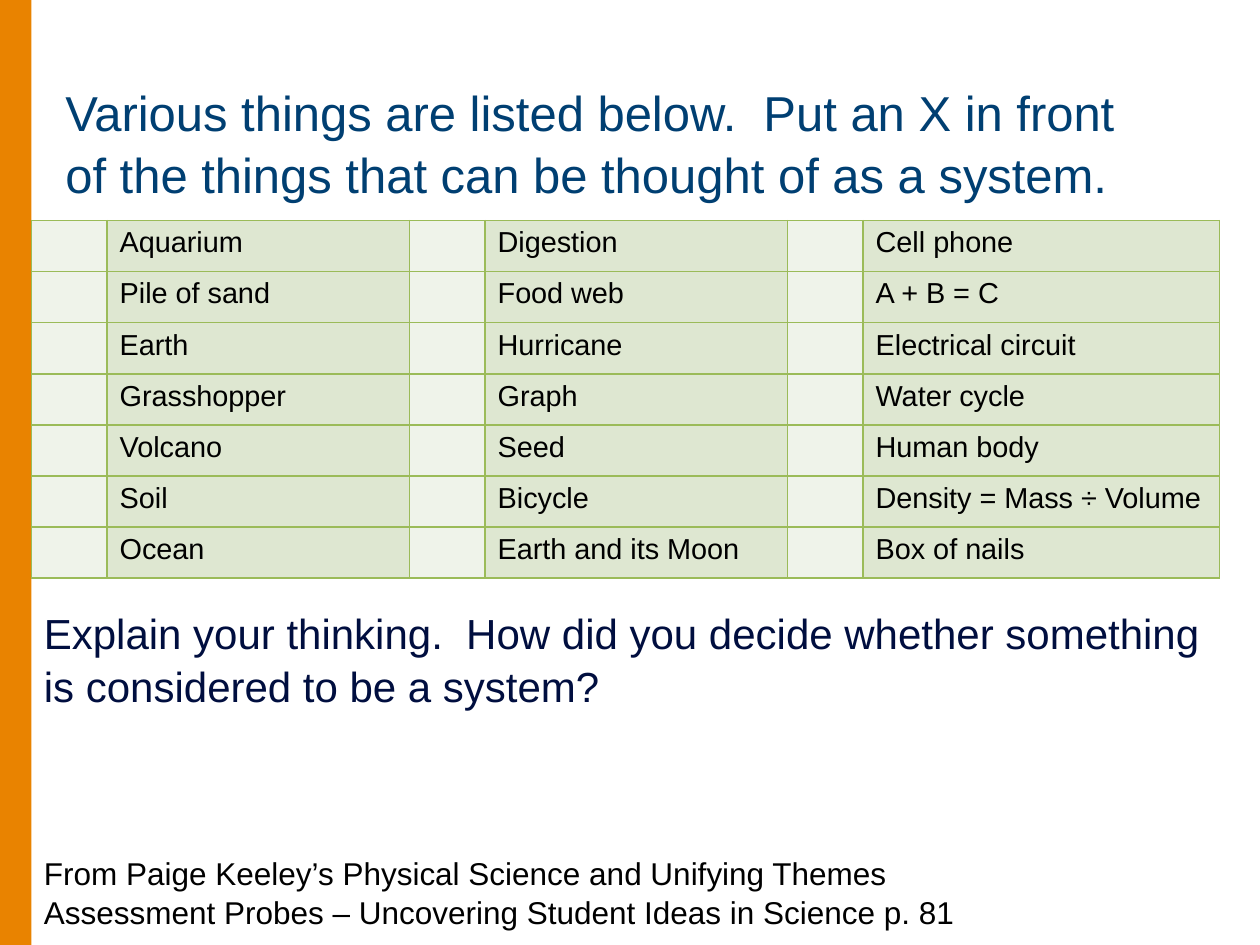
from dataclasses import dataclass

from lxml import etree
from pptx import Presentation
from pptx.dml.color import RGBColor
from pptx.enum.shapes import MSO_SHAPE
from pptx.enum.text import MSO_ANCHOR
from pptx.oxml.ns import qn
from pptx.util import Pt

RECTANGLE = MSO_SHAPE.RECTANGLE
TOP = MSO_ANCHOR.TOP
MIDDLE = MSO_ANCHOR.MIDDLE
PX = 9144
BORDER_SIDES = ("a:lnL", "a:lnR", "a:lnT", "a:lnB")


@dataclass(frozen=True)
class Theme:
    """Holds the colours and type sizes of the slide."""
    font: str = "Arial"
    bar: str = "E98300"
    title: str = "003F72"
    question: str = "000E3F"
    text: str = "000000"
    border: str = "9BBB59"
    check_fill: str = "EFF3EA"
    item_fill: str = "DEE7D1"
    title_size: float = 28
    question_size: float = 24
    source_size: float = 18
    item_size: float = 16.5
    border_width: float = 1
    line_spacing: float = 1.05


THEME = Theme()

ITEMS = (
    ("Aquarium", "Digestion", "Cell phone"),
    ("Pile of sand", "Food web", "A + B = C"),
    ("Earth", "Hurricane", "Electrical circuit"),
    ("Grasshopper", "Graph", "Water cycle"),
    ("Volcano", "Seed", "Human body"),
    ("Soil", "Bicycle", "Density = Mass ÷ Volume"),
    ("Ocean", "Earth and its Moon", "Box of nails"),
)


def to_emu(box):
    """Turn a box of px lengths into EMU."""
    return [length * PX for length in box]


def style_font(font, size, color):
    """Set the typeface, size and colour of a font."""
    font.name = THEME.font
    font.size = Pt(size)
    font.color.rgb = RGBColor.from_string(color)


def add_side_bar(page, box):
    """Draw the solid bar along the edge of the page."""
    bar = page.shapes.add_shape(RECTANGLE, *to_emu(box))
    bar.shadow.inherit = False
    bar.fill.solid()
    bar.fill.fore_color.rgb = RGBColor.from_string(THEME.bar)
    bar.line.fill.background()


def add_text(page, box, text, size, color, anchor=TOP):
    """Place one wrapped paragraph in the box."""
    frame = page.shapes.add_textbox(*to_emu(box)).text_frame
    frame.word_wrap = True
    frame.vertical_anchor = anchor
    frame.text = text
    para = frame.paragraphs[0]
    para.line_spacing = THEME.line_spacing
    style_font(para.runs[0].font, size, color)


def add_borders(cell):
    """Give a cell the same line on all four sides."""
    properties = cell._tc.get_or_add_tcPr()
    for side in BORDER_SIDES:
        line = etree.SubElement(properties, qn(side), w=str(Pt(THEME.border_width)))
        fill = etree.SubElement(line, qn("a:solidFill"))
        etree.SubElement(fill, qn("a:srgbClr"), val=THEME.border)


def fill_cell(cell, text, fill):
    """Write and colour one cell."""
    cell.text = text
    para = cell.text_frame.paragraphs[0]
    style_font(para.font, THEME.item_size, THEME.text)
    for span in para.runs:
        style_font(span.font, THEME.item_size, THEME.text)
    add_borders(cell)
    cell.fill.solid()
    cell.fill.fore_color.rgb = RGBColor.from_string(fill)


def add_checklist(page, box, check_width=60, item_width=240):
    """Fill the box with pairs of check and item columns."""
    pairs = len(ITEMS[0])
    left, top, width, height = to_emu(box)
    table = page.shapes.add_table(
        len(ITEMS), pairs * 2, left, top, width, height).table
    table.first_row = False
    table.horz_banding = False
    last_width = box[2] - pairs * check_width - (pairs - 1) * item_width
    for pair in range(pairs):
        table.columns[pair * 2].width = check_width * PX
        table.columns[pair * 2 + 1].width = (
            last_width if pair == pairs - 1 else item_width) * PX
    for row, names in enumerate(ITEMS):
        table.rows[row].height = height // len(ITEMS)
        for pair, name in enumerate(names):
            fill_cell(table.cell(row, pair * 2), "", THEME.check_fill)
            fill_cell(table.cell(row, pair * 2 + 1), name, THEME.item_fill)


def main():
    """Build the slide and save it."""
    deck = Presentation()
    deck.slide_width, deck.slide_height = to_emu((1000, 750))
    page = deck.slides.add_slide(deck.slide_layouts[6])
    add_side_bar(page, (0, 0, 25, 750))
    add_text(page, (42, 50, 875, 125),
             "Various things are listed below.  Put an X in front of the things "
             "that can be thought of as a system.",
             THEME.title_size, THEME.title, MIDDLE)
    add_checklist(page, (25, 175, 943, 284))
    add_text(page, (25, 671, 775, 71),
             "From Paige Keeley’s Physical Science and Unifying Themes "
             "Assessment Probes – Uncovering Student Ideas in Science p. 81",
             THEME.source_size, THEME.text)
    add_text(page, (25, 475, 942, 91),
             "Explain your thinking.  How did you decide whether something "
             "is considered to be a system?",
             THEME.question_size, THEME.question)
    deck.save("out.pptx")


if __name__ == "__main__":
    main()
